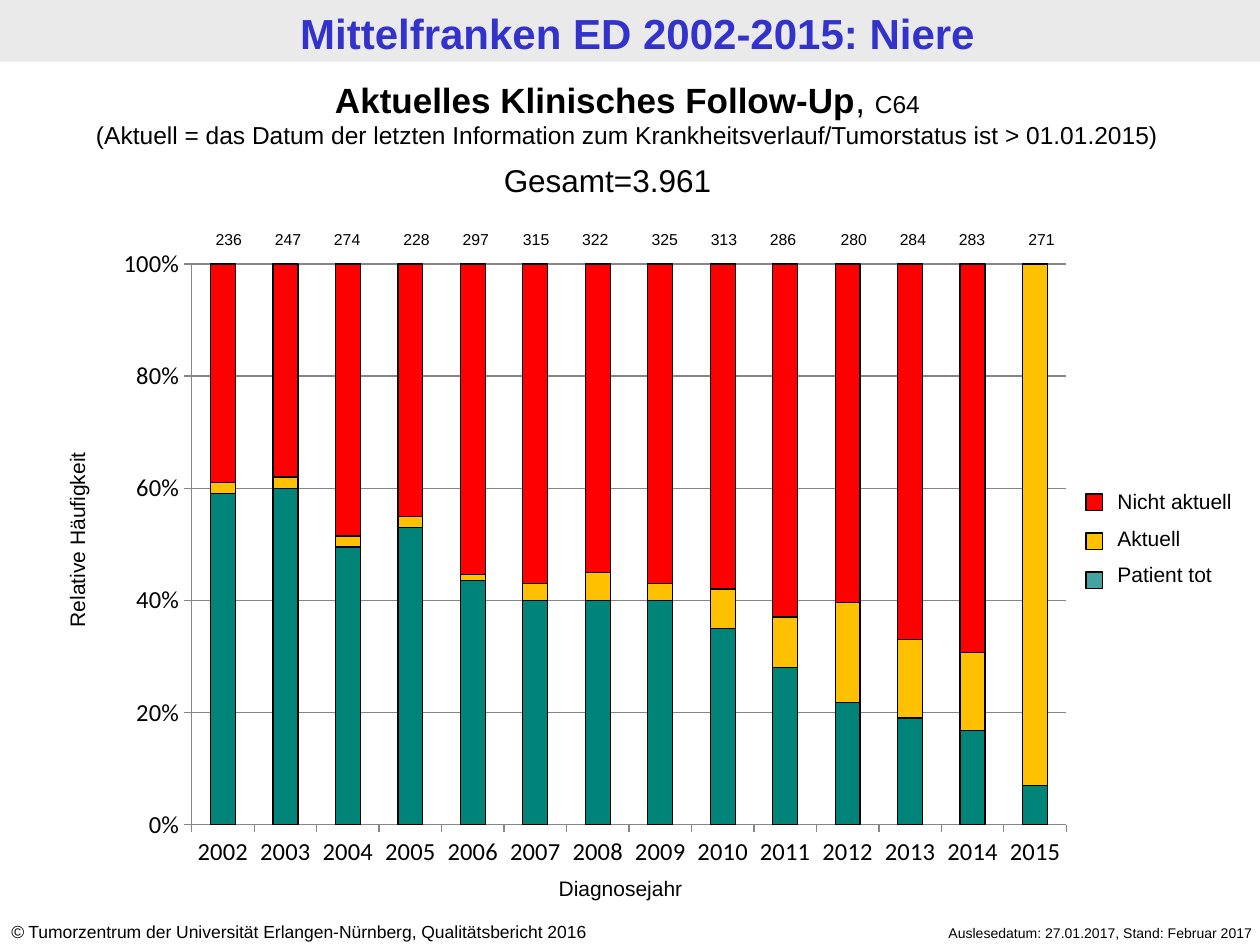
from lxml import etree
from pptx import Presentation
from pptx.chart.data import CategoryChartData
from pptx.dml.color import RGBColor
from pptx.enum.chart import XL_CHART_TYPE, XL_TICK_MARK
from pptx.enum.shapes import MSO_SHAPE
from pptx.enum.text import MSO_AUTO_SIZE, PP_ALIGN
from pptx.oxml import parse_xml
from pptx.oxml.ns import nsdecls, qn
from pptx.util import Inches, Pt

LEFT, CENTER, RIGHT = PP_ALIGN.LEFT, PP_ALIGN.CENTER, PP_ALIGN.RIGHT
STACKED_100 = XL_CHART_TYPE.COLUMN_STACKED_100
TICK_OUT = XL_TICK_MARK.OUTSIDE
RECT = MSO_SHAPE.RECTANGLE
FIT_TEXT = MSO_AUTO_SIZE.SHAPE_TO_FIT_TEXT

YEARS = [str(year) for year in range(2002, 2016)]
SERIES = [
    ("Patient tot", "008378", [59, 60, 50, 53, 44, 40, 40, 40, 35, 28, 22, 19, 17, 7]),
    ("Aktuell", "FFC000", [2, 2, 2, 2, 1, 3, 5, 3, 7, 9, 18, 14, 14, 93]),
    ("Nicht aktuell", "FF0000", [39, 38, 49, 45, 56, 57, 55, 57, 58, 63, 61, 67, 70, None]),
]
# Legend entries from top to bottom: label, colour, opacity in percent
LEGEND = [("Nicht aktuell", "FF0000", 100), ("Aktuell", "FFC000", 100), ("Patient tot", "008380", 74)]
# Number of cases per year and left edge of its label
COUNTS = [
    (236, 1.54), (247, 2.01), (274, 2.48), (228, 3.03), (297, 3.5), (315, 3.98), (322, 4.45),
    (325, 5), (313, 5.47), (286, 5.94), (280, 6.5), (284, 6.97), (283, 7.44), (271, 7.99),
]
# Inner plot area as fractions of the chart frame
PLOT = {"x": 0.09, "y": 0.044, "w": 0.89, "h": 0.871}


def rgb(color):
    return RGBColor.from_string(color)


def set_line(line, color, width=0.75):
    line.color.rgb = rgb(color)
    line.width = Pt(width)


def add_text(slide, box, paragraphs, align=LEFT, before=0, rotation=0):
    """Each paragraph is a list of runs: (text, size, font settings)."""
    sp = slide.shapes.add_textbox(*[Inches(v) for v in box])
    sp.rotation = rotation
    tf = sp.text_frame
    tf.word_wrap = True
    tf.auto_size = FIT_TEXT
    for i, runs in enumerate(paragraphs):
        p = tf.paragraphs[0] if i == 0 else tf.add_paragraph()
        p.alignment = align
        if i and before:
            p.space_before = Pt(before)
        for text, size, style in runs:
            r = p.add_run()
            r.text = text
            r.font.name = "Arial"
            r.font.size = Pt(size)
            r.font.bold = style.get("bold", False)
            r.font.italic = style.get("italic", False)
            r.font.color.rgb = rgb(style.get("color", "000000"))


def add_rect(slide, box, color, outline=None, opacity=100):
    sp = slide.shapes.add_shape(RECT, *[Inches(v) for v in box])
    sp.shadow.inherit = False
    sp.fill.solid()
    sp.fill.fore_color.rgb = rgb(color)
    if opacity < 100:
        clr = sp.fill._xPr.find(".//" + qn("a:srgbClr"))
        etree.SubElement(clr, qn("a:alpha")).set("val", str(opacity * 1000))
    if outline:
        set_line(sp.line, outline)
    else:
        sp.line.fill.background()


def set_plot_area(chart):
    plot_area = chart._chartSpace.chart.plotArea
    for old in plot_area.findall(qn("c:layout")):
        plot_area.remove(old)
    sizes = "".join(f'<c:{key} val="{value}"/>' for key, value in PLOT.items())
    plot_area.insert(0, parse_xml(
        f'<c:layout {nsdecls("c")}><c:manualLayout><c:layoutTarget val="inner"/>'
        f'<c:xMode val="edge"/><c:yMode val="edge"/>{sizes}</c:manualLayout></c:layout>'))


def add_follow_up_chart(slide, box):
    data = CategoryChartData()
    data.categories = YEARS
    for name, _, values in SERIES:
        data.add_series(name, values)
    chart = slide.shapes.add_chart(STACKED_100, *[Inches(v) for v in box], data).chart
    chart.has_legend = False
    chart.has_title = False
    chart.font.name = "Calibri"
    chart.font.size = Pt(14)
    chart.font.color.rgb = rgb("000000")
    set_plot_area(chart)

    # Columns
    plot = chart.plots[0]
    plot.gap_width = 150
    plot.overlap = 100
    plot.vary_by_categories = False
    for series, (_, color, _) in zip(plot.series, SERIES):
        series.format.fill.solid()
        series.format.fill.fore_color.rgb = rgb(color)
        set_line(series.format.line, "000000")

    # Axes
    for axis in (chart.category_axis, chart.value_axis):
        axis.major_tick_mark = TICK_OUT
        axis.tick_labels.font.size = Pt(14)
        set_line(axis.format.line, "868686")
    value_axis = chart.value_axis
    value_axis.minimum_scale, value_axis.maximum_scale = 0, 1
    value_axis.major_unit = 0.2
    value_axis.tick_labels.number_format = "0%"
    value_axis.tick_labels.number_format_is_linked = False
    value_axis.has_major_gridlines = True
    set_line(value_axis.major_gridlines.format.line, "868686")


def add_legend(slide):
    add_text(slide, (8.77, 3.83, 1.42, 0.91), [[(label, 12, {})] for label, _, _ in LEGEND], before=6.5)
    for i, (_, color, opacity) in enumerate(LEGEND):
        add_rect(slide, (8.62, 3.92 + 0.31 * i, 0.13, 0.13), color, "000000", opacity)


def main():
    prs = Presentation()
    prs.slide_width, prs.slide_height = Inches(10), Inches(7.5)
    slide = prs.slides.add_slide(prs.slide_layouts[6])

    # Header band and footer
    add_rect(slide, (0, 0, 10, 0.49), "EAEAEA")
    add_text(slide, (0.06, 0.01, 10, 0.49),
             [[("Mittelfranken ED 2002-2015: Niere", 24, {"bold": True, "color": "3333CC"})]], CENTER)
    add_text(slide, (-0.01, 7.26, 5.24, 0.27),
             [[("©", 10, {"italic": True}),
               (" Tumorzentrum der Universität Erlangen-Nürnberg, Qualitätsbericht 2016", 10, {})]])
    add_text(slide, (6.65, 7.29, 3.39, 0.24),
             [[("Auslesedatum: 27.01.2017, Stand: Februar 2017", 8, {})]], RIGHT)

    # Chart, axis titles and legend
    add_follow_up_chart(slide, (0.82, 1.87, 7.8, 5.11))
    add_text(slide, (-0.59, 4.13, 2.41, 0.31), [[("Relative Häufigkeit", 12, {})]], CENTER, rotation=270)
    add_text(slide, (3.8, 6.9, 2.25, 0.31), [[("Diagnosejahr", 12, {})]], CENTER)
    add_legend(slide)

    # Headings
    add_text(slide, (-0.04, 0.57, 10.04, 0.67), [
        [("Aktuelles Klinisches Follow-Up", 20, {"bold": True}), (", ", 20, {}), ("C64", 14, {})],
        [("(Aktuell = das Datum der letzten Information zum Krankheitsverlauf/Tumorstatus"
          " ist > 01.01.2015)", 14, {})],
    ], CENTER)
    add_text(slide, (3.9, 1.23, 2.2, 0.4), [[("Gesamt=3.961", 18, {})]])

    # Case numbers above the columns
    for count, left in COUNTS:
        add_text(slide, (left, 1.77, 0.55, 0.25), [[(str(count), 9, {})]], CENTER)

    prs.save("out.pptx")


if __name__ == "__main__":
    main()
